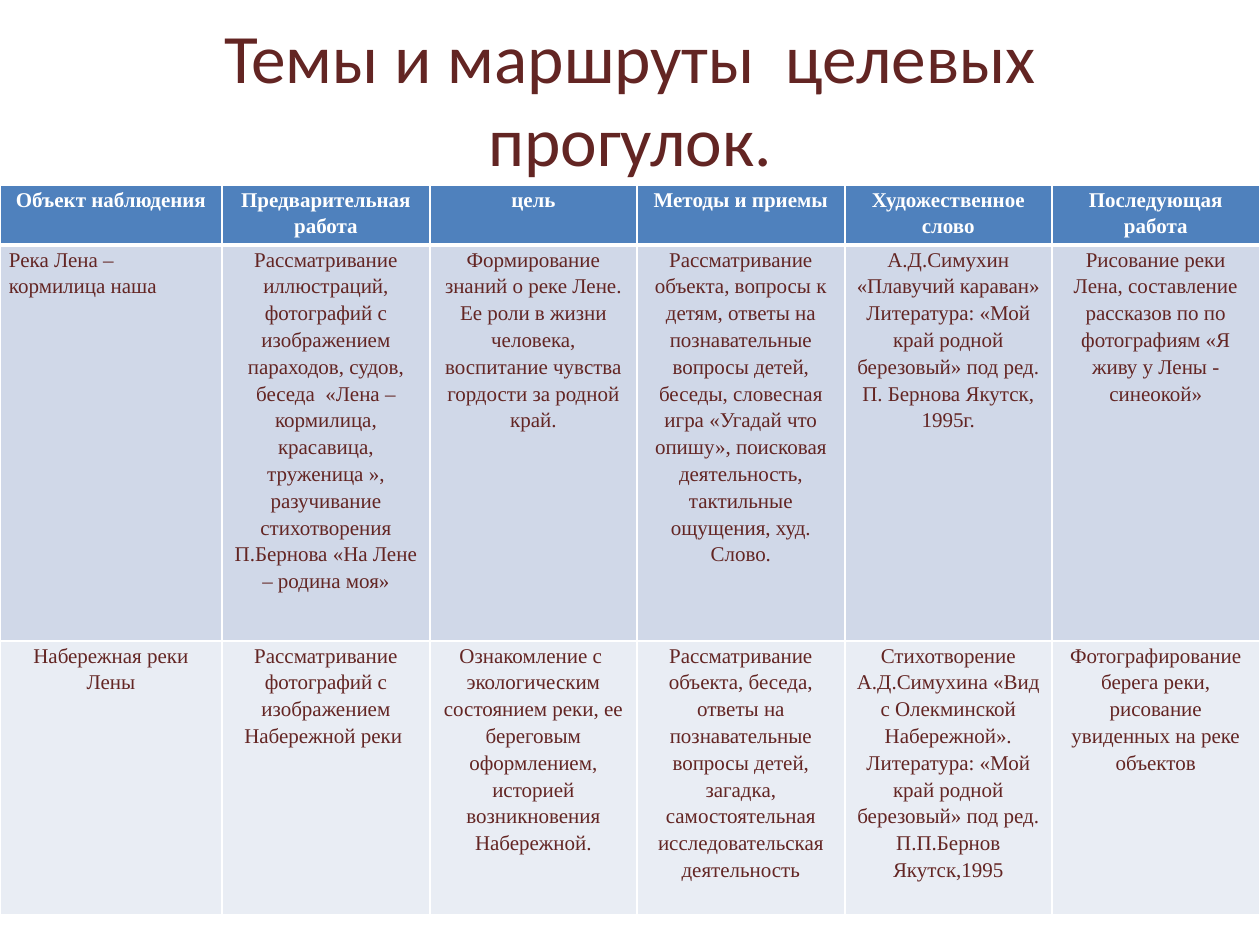
from lxml import etree
from pptx import Presentation
from pptx.dml.color import RGBColor
from pptx.enum.text import MSO_ANCHOR, PP_ALIGN
from pptx.oxml.ns import qn
from pptx.util import Emu, Pt

LEFT, CENTER = PP_ALIGN.LEFT, PP_ALIGN.CENTER
TOP, MIDDLE = MSO_ANCHOR.TOP, MSO_ANCHOR.MIDDLE

EMU_PER_PX = 914400 // 126
BROWN, WHITE = "632523", "FFFFFF"
ROW_FILLS = ["4F81BD", "D0D8E8", "E9EDF4"]
COLUMN_WIDTHS = [222, 208, 207, 208, 207, 208]
ROW_HEIGHTS = [60, 396, 274]

ROWS = [
    ["Объект наблюдения", "Предварительная работа", "цель",
     "Методы и приемы", "Художественное слово", "Последующая работа"],
    ["Река Лена – кормилица наша",
     "Рассматривание иллюстраций, фотографий с изображением параходов, судов, "
     "беседа  «Лена – кормилица, красавица, труженица », разучивание "
     "стихотворения П.Бернова «На Лене – родина моя»",
     "Формирование знаний о реке Лене. Ее роли в жизни человека, "
     "воспитание чувства гордости за родной край.",
     "Рассматривание объекта, вопросы к детям, ответы на познавательные "
     "вопросы детей, беседы, словесная игра «Угадай что опишу», поисковая "
     "деятельность, тактильные ощущения, худ. Слово.",
     "А.Д.Симухин «Плавучий караван»\n"
     "Литература: «Мой край родной березовый» под ред. П. Бернова Якутск,\n"
     "1995г.",
     "Рисование реки Лена, составление рассказов по по фотографиям "
     "«Я живу у Лены - синеокой»"],
    ["Набережная реки Лены",
     "Рассматривание фотографий с изображением Набережной реки ",
     "Ознакомление с  экологическим состоянием реки, ее береговым "
     "оформлением, историей возникновения Набережной.",
     "Рассматривание объекта, беседа, ответы на познавательные вопросы "
     "детей, загадка, самостоятельная исследовательская деятельность",
     "Стихотворение А.Д.Симухина «Вид с Олекминской Набережной». "
     "Литература: «Мой край родной березовый» под ред. П.П.Бернов Якутск,1995",
     "Фотографирование берега реки, рисование увиденных на реке объектов"],
]


def px(length):
    return Emu(length * EMU_PER_PX)


def color(hex_value):
    return RGBColor.from_string(hex_value)


def write_text(frame, text, *, font, size, ink, bold=False, align=CENTER, spacing=1.0):
    """Fill a text frame, one paragraph for each line of text."""
    frame.word_wrap = True
    for index, line in enumerate(text.split("\n")):
        paragraph = frame.add_paragraph() if index else frame.paragraphs[0]
        paragraph.alignment = align
        paragraph.line_spacing = spacing
        run = paragraph.add_run()
        run.text = line
        run.font.name = font
        run.font.size = Pt(size)
        run.font.bold = bold
        run.font.color.rgb = color(ink)


def add_title(slide, text):
    title = slide.shapes.add_textbox(px(63), px(0), px(1134), px(195))
    title.text_frame.vertical_anchor = MIDDLE
    write_text(title.text_frame, text, font="Calibri", size=39.6, ink=BROWN)


def set_borders(cell, bottom_width):
    properties = cell._tc.get_or_add_tcPr()
    for side, width in (("L", 1), ("R", 1), ("T", 1), ("B", bottom_width)):
        line = etree.SubElement(properties, qn(f"a:ln{side}"), w=str(Pt(width)))
        fill = etree.SubElement(line, qn("a:solidFill"))
        etree.SubElement(fill, qn("a:srgbClr"), val=WHITE)


def style_cell(cell, fill, bottom_width):
    set_borders(cell, bottom_width)
    cell.fill.solid()
    cell.fill.fore_color.rgb = color(fill)
    cell.margin_left = cell.margin_right = px(9)
    cell.margin_top = cell.margin_bottom = 0
    cell.vertical_anchor = TOP


def add_walks_table(slide):
    walks = slide.shapes.add_table(
        len(ROWS), len(COLUMN_WIDTHS), px(0), px(185),
        px(sum(COLUMN_WIDTHS)), px(sum(ROW_HEIGHTS))).table
    for column, width in zip(walks.columns, COLUMN_WIDTHS):
        column.width = px(width)
    for r, (row, height) in enumerate(zip(walks.rows, ROW_HEIGHTS)):
        row.height = px(height)
        header = r == 0
        for c, text in enumerate(ROWS[r]):
            cell = walks.cell(r, c)
            style_cell(cell, ROW_FILLS[r], 3 if header else 1)
            write_text(cell.text_frame, text, font="Times New Roman", size=12,
                       ink=WHITE if header else BROWN, bold=header,
                       align=LEFT if (r, c) == (1, 0) else CENTER, spacing=1.15)


def main():
    deck = Presentation()
    deck.slide_width, deck.slide_height = px(1260), px(945)
    slide = deck.slides.add_slide(deck.slide_layouts[6])
    add_title(slide, "Темы и маршруты  целевых прогулок.")
    add_walks_table(slide)
    deck.save("out.pptx")


if __name__ == "__main__":
    main()
